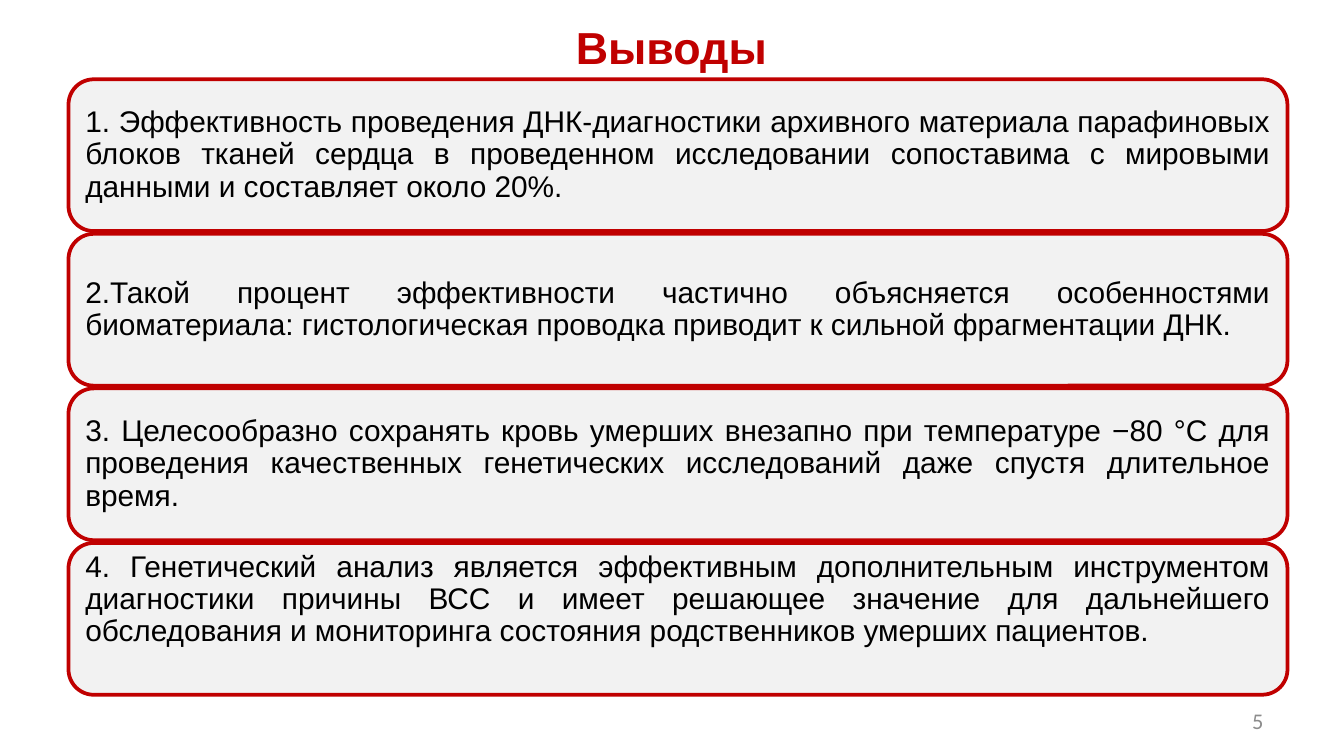
from pptx import Presentation
from pptx.dml.color import RGBColor
from pptx.enum.shapes import MSO_SHAPE
from pptx.enum.text import MSO_ANCHOR, MSO_AUTO_SIZE, PP_ALIGN
from pptx.util import Inches, Pt

ROUNDED = MSO_SHAPE.ROUNDED_RECTANGLE
MIDDLE = MSO_ANCHOR.MIDDLE
GROW = MSO_AUTO_SIZE.SHAPE_TO_FIT_TEXT
CENTER, RIGHT, JUSTIFY = PP_ALIGN.CENTER, PP_ALIGN.RIGHT, PP_ALIGN.JUSTIFY

RED, GRAY, PANEL, BLACK = "C00000", "8C8C8C", "F2F2F2", "000000"
CARD_LEFT, CARD_TOP, CARD_WIDTH, CARD_HEIGHT = 0.51, 0.59, 9.07, 1.13
CARD_PITCH = 1.15
INSET = 0.07
LAST_BOTTOM_INSET = 0.28

CONCLUSIONS = [
    "1. Эффективность проведения ДНК-диагностики архивного материала парафиновых блоков тканей сердца в проведенном исследовании сопоставима с мировыми данными и составляет около 20%.",
    "2.Такой процент эффективности частично объясняется особенностями биоматериала: гистологическая проводка приводит к сильной фрагментации ДНК.",
    "3. Целесообразно сохранять кровь умерших внезапно при температуре −80 °C для проведения качественных генетических исследований даже спустя длительное время.",
    "4. Генетический анализ является эффективным дополнительным инструментом диагностики причины ВСС и имеет решающее значение для дальнейшего обследования и мониторинга состояния родственников умерших пациентов.",
]


def color(value):
    return RGBColor.from_string(value)


def set_insets(tf, left, top, right, bottom):
    tf.margin_left, tf.margin_top = Inches(left), Inches(top)
    tf.margin_right, tf.margin_bottom = Inches(right), Inches(bottom)


def write(tf, text, size, fill, align, font="Arial", bold=False):
    tf.word_wrap = True
    tf.vertical_anchor = MIDDLE
    p = tf.paragraphs[0]
    p.alignment = align
    r = p.add_run()
    r.text = text
    r.font.name = font
    r.font.size = Pt(size)
    r.font.bold = bold
    r.font.color.rgb = color(fill)
    return p


def add_title(s, text):
    sp = s.shapes.title
    sp.left, sp.top = Inches(0.58), Inches(0.15)
    sp.width, sp.height = Inches(8.83), Inches(0.4)
    tf = sp.text_frame
    set_insets(tf, 0, 0, 0, 0)
    tf.auto_size = GROW
    write(tf, text, 24, RED, CENTER, bold=True)


def add_card(s, top, text, top_inset, bottom_inset):
    sp = s.shapes.add_shape(ROUNDED, Inches(CARD_LEFT), Inches(top),
                            Inches(CARD_WIDTH), Inches(CARD_HEIGHT))
    sp.shadow.inherit = False
    sp.fill.solid()
    sp.fill.fore_color.rgb = color(PANEL)
    sp.line.color.rgb = color(RED)
    sp.line.width = Pt(2)
    tf = sp.text_frame
    set_insets(tf, INSET, top_inset, INSET, bottom_inset)
    p = write(tf, text, 16, BLACK, JUSTIFY)
    p.line_spacing = 0.9


def add_page_number(s, number):
    sp = s.shapes.add_textbox(Inches(7.17), Inches(5.21), Inches(2.33), Inches(0.3))
    write(sp.text_frame, number, 12, GRAY, RIGHT, font="Calibri")


def main():
    prs = Presentation()
    prs.slide_width = Inches(10)
    prs.slide_height = prs.slide_width * 9 // 16
    s = prs.slides.add_slide(prs.slide_layouts.get_by_name("Title Only"))
    add_page_number(s, "5")
    add_title(s, "Выводы")
    for i, text in enumerate(CONCLUSIONS):
        last = i == len(CONCLUSIONS) - 1
        insets = (0, LAST_BOTTOM_INSET) if last else (INSET, INSET)
        add_card(s, CARD_TOP + i * CARD_PITCH, text, *insets)
    prs.save("out.pptx")


if __name__ == "__main__":
    main()
